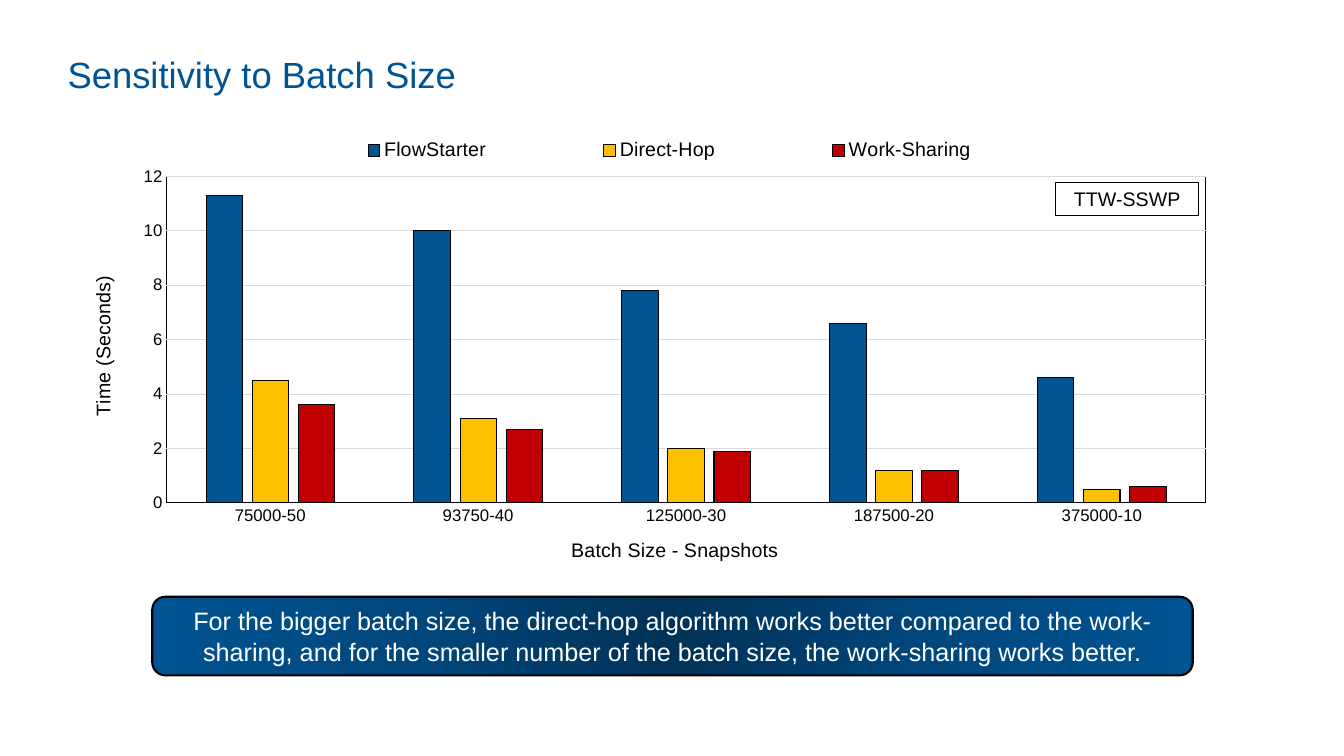
import dataclasses

import lxml.etree
import pptx
import pptx.chart.data
import pptx.dml.color
import pptx.enum.chart
import pptx.enum.shapes
import pptx.enum.text
import pptx.oxml
import pptx.oxml.ns
import pptx.util

PX = 9144
DRAWING_NS = "http://schemas.openxmlformats.org/drawingml/2006/main"
CHART_NS = "http://schemas.openxmlformats.org/drawingml/2006/chart"


@dataclasses.dataclass(frozen=True)
class Theme:
    font: str = "Arial"
    blue: str = "005493"
    blue_middle: str = "00477C"
    blue_dark: str = "003257"
    amber: str = "FFC000"
    red: str = "C00000"
    grid: str = "D9D9D9"
    black: str = "000000"
    white: str = "FFFFFF"
    title_size: int = 26
    callout_size: int = 18
    label_size: int = 14
    tick_size: int = 12
    thin: float = 0.75
    thick: float = 1.5


@dataclasses.dataclass(frozen=True)
class Box:
    left: int
    top: int
    width: int
    height: int

    def emu(self):
        return [length * PX for length in (self.left, self.top, self.width, self.height)]


THEME = Theme()
CATEGORIES = ["75000-50", "93750-40", "125000-30", "187500-20", "375000-10"]
SERIES = [
    ("FlowStarter", THEME.blue, [11.3, 10, 7.8, 6.6, 4.6]),
    ("Direct-Hop", THEME.amber, [4.5, 3.1, 2, 1.2, 0.5]),
    ("Work-Sharing", THEME.red, [3.6, 2.7, 1.9, 1.2, 0.6]),
]
CALLOUT = (
    "For the bigger batch size, the direct-hop algorithm works better compared to the "
    "work-sharing, and for the smaller number of the batch size, the work-sharing works better."
)


def rgb(color):
    return pptx.dml.color.RGBColor.from_string(color)


def style_font(font, size, color):
    font.name = THEME.font
    font.size = pptx.util.Pt(size)
    font.bold = False
    font.color.rgb = rgb(color)


def style_line(line, color, width):
    line.color.rgb = rgb(color)
    line.width = pptx.util.Pt(width)


def write_text(frame, text, size, color, alignment):
    frame.word_wrap = True
    frame.vertical_anchor = pptx.enum.text.MSO_ANCHOR.MIDDLE
    para = frame.paragraphs[0]
    para.alignment = alignment
    span = para.add_run()
    span.text = text
    style_font(span.font, size, color)
    return para


def place_part(element, index, chart_box, left, top, width=None, height=None, inner=False):
    for old in element.findall(pptx.oxml.ns.qn("c:layout")):
        element.remove(old)
    layout = lxml.etree.Element(pptx.oxml.ns.qn("c:layout"))
    manual = lxml.etree.SubElement(layout, pptx.oxml.ns.qn("c:manualLayout"))
    settings = [("xMode", "edge"), ("yMode", "edge"),
                ("x", left / chart_box.width), ("y", top / chart_box.height)]
    if inner:
        settings.insert(0, ("layoutTarget", "inner"))
    if width:
        settings += [("w", width / chart_box.width), ("h", height / chart_box.height)]
    for name, value in settings:
        lxml.etree.SubElement(manual, pptx.oxml.ns.qn("c:" + name)).set("val", str(value))
    element.insert(index, layout)


def add_title(page, box):
    title = page.shapes.title
    title.left, title.top, title.width, title.height = box.emu()
    para = write_text(title.text_frame, "Sensitivity to Batch Size", THEME.title_size,
                      THEME.blue, pptx.enum.text.PP_ALIGN.LEFT)
    para.line_spacing = 0.9


def style_axis(axis, text, box, left, top):
    axis.major_tick_mark = pptx.enum.chart.XL_TICK_MARK.NONE
    axis.minor_tick_mark = pptx.enum.chart.XL_TICK_MARK.NONE
    style_font(axis.tick_labels.font, THEME.tick_size, THEME.black)
    span = axis.axis_title.text_frame.paragraphs[0].add_run()
    span.text = text
    style_font(span.font, THEME.label_size, THEME.black)
    place_part(axis.axis_title._element, 1, box, left, top)


def frame_plot(chart, box):
    plot_area = chart._chartSpace.find(".//" + pptx.oxml.ns.qn("c:plotArea"))
    place_part(plot_area, 0, box, 97, 55, 1031, 324, inner=True)
    plot_area.append(pptx.oxml.parse_xml(
        f'<c:spPr xmlns:c="{CHART_NS}" xmlns:a="{DRAWING_NS}"><a:noFill/>'
        f'<a:ln w="{pptx.util.Pt(THEME.thin)}"><a:solidFill>'
        f'<a:srgbClr val="{THEME.black}"/></a:solidFill></a:ln></c:spPr>'))


def add_time_chart(page, box):
    data = pptx.chart.data.CategoryChartData()
    data.categories = CATEGORIES
    for name, color, values in SERIES:
        data.add_series(name, values)
    kind = pptx.enum.chart.XL_CHART_TYPE.COLUMN_CLUSTERED
    chart = page.shapes.add_chart(kind, *box.emu(), data).chart
    chart.has_title = False
    style_font(chart.font, THEME.tick_size, THEME.black)

    plot = chart.plots[0]
    plot.gap_width = 219
    plot.overlap = -27
    plot.vary_by_categories = False
    for series, (name, color, values) in zip(plot.series, SERIES):
        series.format.fill.solid()
        series.format.fill.fore_color.rgb = rgb(color)
        style_line(series.format.line, THEME.black, THEME.thin)

    style_axis(chart.category_axis, "Batch Size - Snapshots", box, 495, 410)
    style_line(chart.category_axis.format.line, THEME.black, THEME.thin)
    seconds = chart.value_axis
    style_axis(seconds, "Time (Seconds)", box, 18, 150)
    seconds.minimum_scale, seconds.maximum_scale, seconds.major_unit = 0, 12, 2
    seconds.format.line.fill.background()
    style_line(seconds.major_gridlines.format.line, THEME.grid, THEME.thin)

    chart.has_legend = True
    chart.legend.position = pptx.enum.chart.XL_LEGEND_POSITION.TOP
    chart.legend.include_in_layout = False
    style_font(chart.legend.font, THEME.label_size, THEME.black)
    place_part(chart.legend._element, 1, box, 187, 12, 818, 34)
    frame_plot(chart, box)


def add_panel(page, box, shape_type, text, size, color, line_width):
    panel = page.shapes.add_shape(shape_type, *box.emu())
    panel.shadow.inherit = False
    style_line(panel.line, THEME.black, line_width)
    write_text(panel.text_frame, text, size, color, pptx.enum.text.PP_ALIGN.CENTER)
    return panel


def add_dataset_label(page, box):
    label = add_panel(page, box, pptx.enum.shapes.MSO_SHAPE.RECTANGLE, "TTW-SSWP",
                      THEME.label_size, THEME.black, THEME.thin)
    label.fill.solid()
    label.fill.fore_color.rgb = rgb(THEME.white)


def add_callout(page, box):
    callout = add_panel(page, box, pptx.enum.shapes.MSO_SHAPE.ROUNDED_RECTANGLE, CALLOUT,
                        THEME.callout_size, THEME.white, THEME.thick)
    colors = (THEME.blue_dark, THEME.blue_middle, THEME.blue)
    stops = "".join(f'<a:gs pos="{50000 * step}"><a:srgbClr val="{color}"/></a:gs>'
                    for step, color in enumerate(colors))
    gradient = pptx.oxml.parse_xml(
        f'<a:gradFill xmlns:a="{DRAWING_NS}" rotWithShape="1"><a:gsLst>{stops}</a:gsLst>'
        '<a:path path="circle"><a:fillToRect l="50000" t="50000" r="50000" b="50000"/>'
        '</a:path></a:gradFill>')
    properties = callout._element.spPr
    properties.find(pptx.oxml.ns.qn("a:prstGeom")).addnext(gradient)


def main():
    deck = pptx.Presentation()
    deck.slide_width, deck.slide_height = 1333 * PX, 750 * PX
    page = deck.slides.add_slide(deck.slide_layouts[5])
    add_title(page, Box(57, 44, 1214, 64))
    add_time_chart(page, Box(68, 120, 1150, 460))
    add_dataset_label(page, Box(1047, 181, 142, 33))
    add_callout(page, Box(151, 592, 1032, 78))
    deck.save("out.pptx")


if __name__ == "__main__":
    main()
